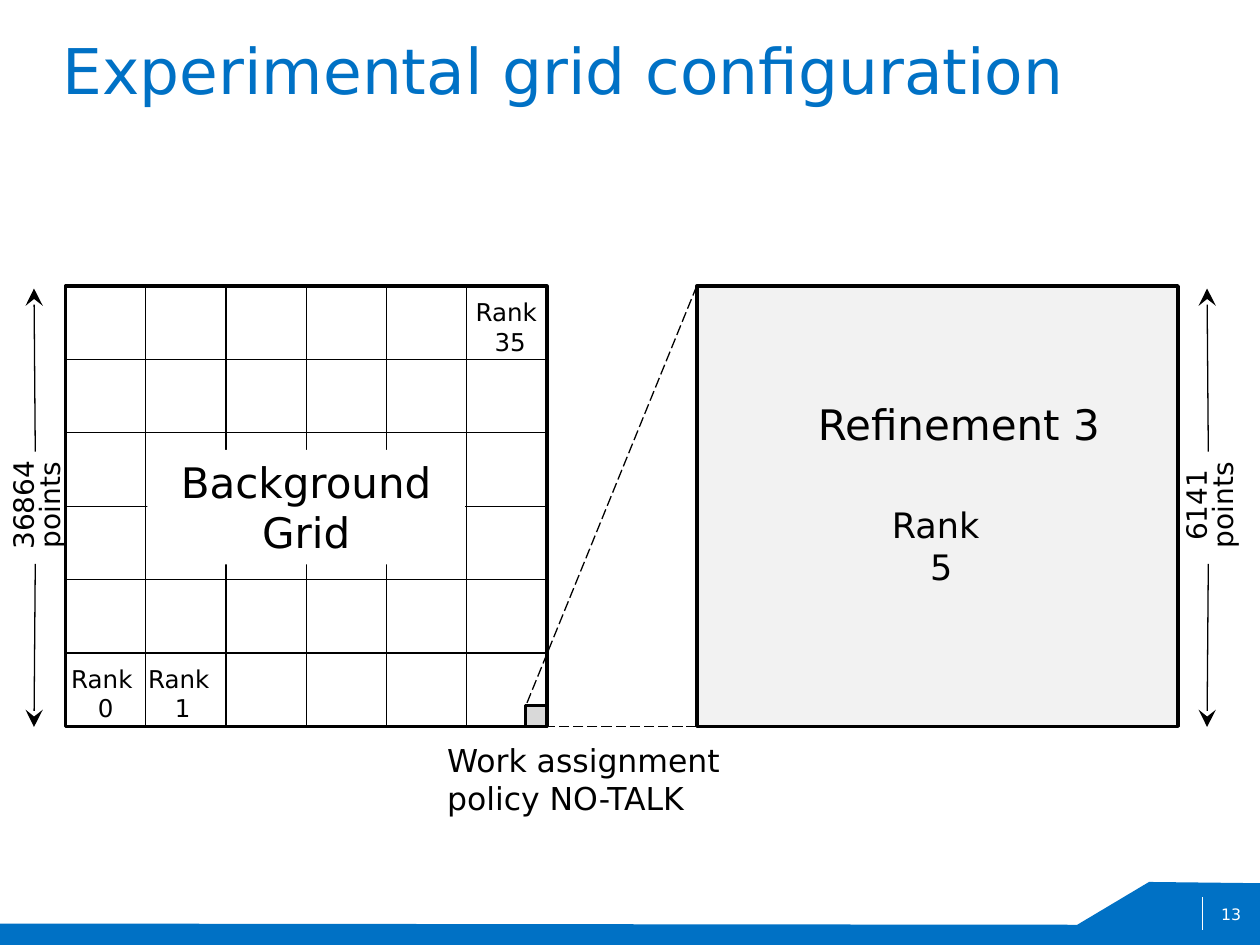
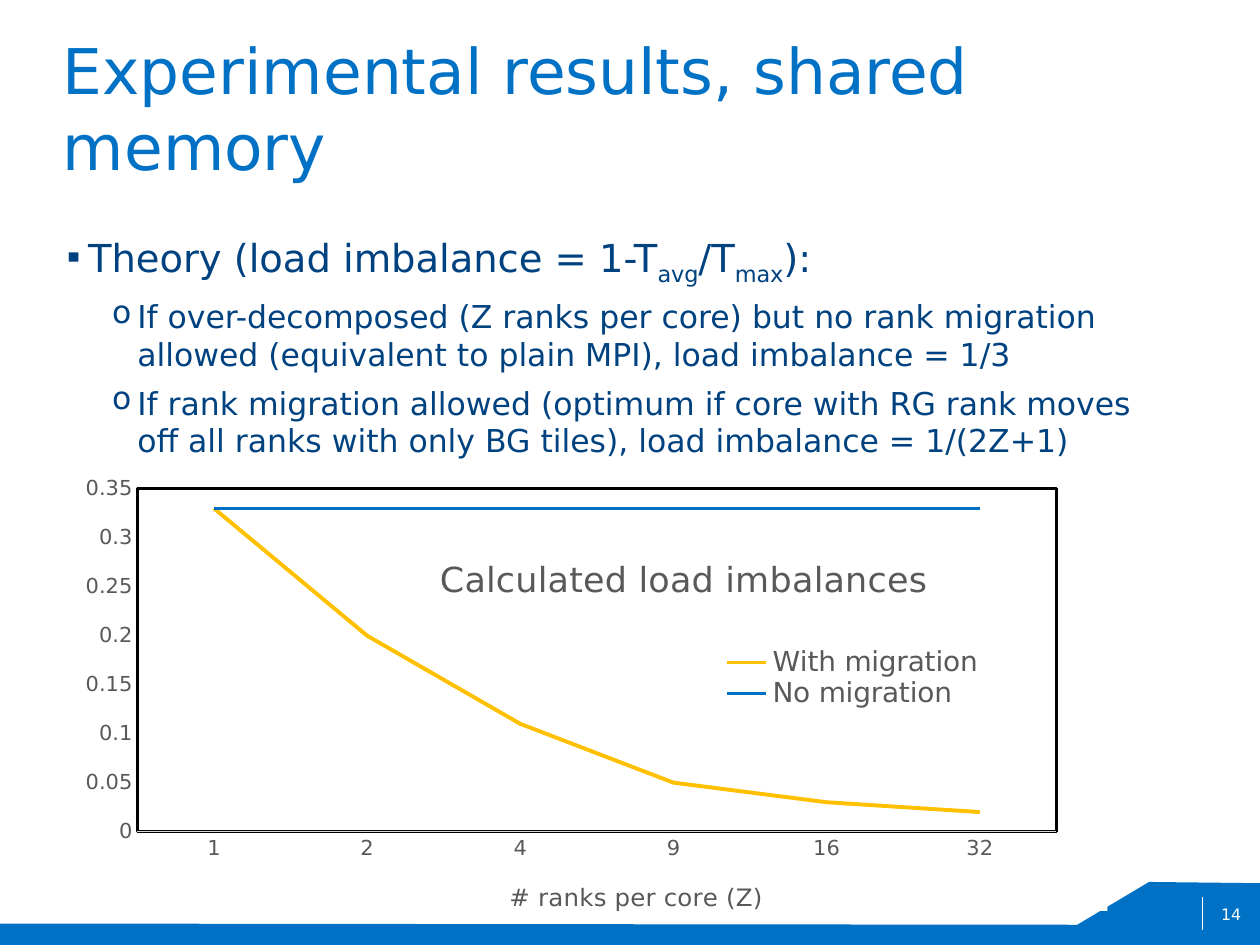
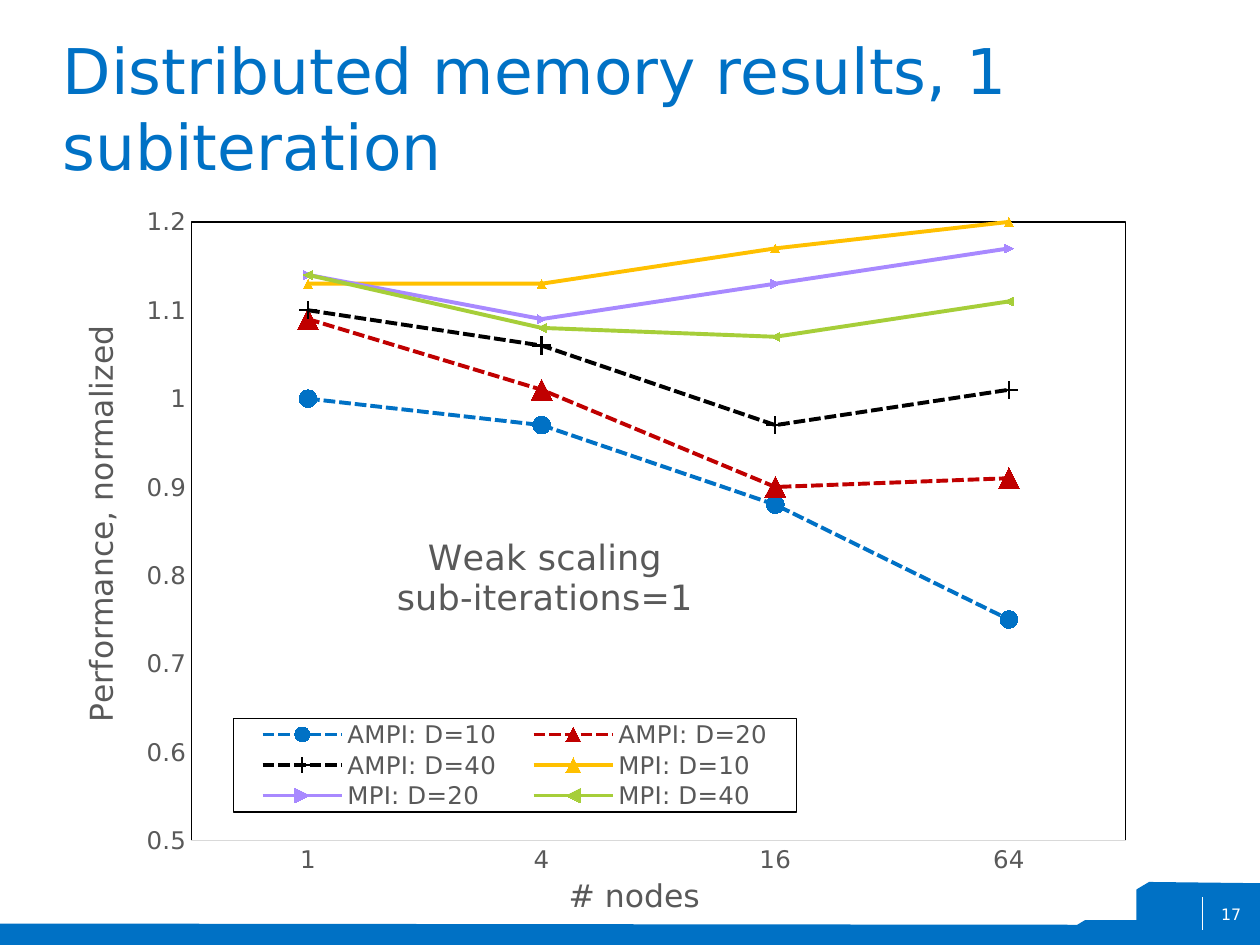
from pptx import Presentation
from pptx import util as u
from pptx.chart.data import CategoryChartData
from pptx.dml.color import RGBColor
from pptx.enum import chart as charts
from pptx.enum import dml, shapes, text
from pptx.oxml import parse_xml
from pptx.oxml.ns import nsdecls, qn

WIDTH, HEIGHT = u.Inches(10), u.Inches(7.5)
COLUMN, ROW = WIDTH / 100, HEIGHT / 75
FONT = "DejaVu Sans"
BLUE = RGBColor(0x00, 0x71, 0xC5)
NAVY = RGBColor(0x00, 0x42, 0x80)
BLACK = RGBColor(0x00, 0x00, 0x00)
WHITE = RGBColor(0xFF, 0xFF, 0xFF)
PALE = RGBColor(0xF2, 0xF2, 0xF2)
SILVER = RGBColor(0xD9, 0xD9, 0xD9)
GRAY = RGBColor(0x59, 0x59, 0x59)
GOLD = RGBColor(0xFF, 0xC0, 0x00)
RED = RGBColor(0xC0, 0x00, 0x00)
VIOLET = RGBColor(0xA8, 0x89, 0xFF)
LIME = RGBColor(0xA6, 0xCE, 0x39)
LEFT, CENTER, RIGHT = text.PP_ALIGN.LEFT, text.PP_ALIGN.CENTER, text.PP_ALIGN.RIGHT
MARK = charts.XL_MARKER_STYLE


def point(column, row):
    """Turn grid columns and rows into slide units."""
    return round(column * COLUMN), round(row * ROW)


def area(column, row, columns, rows):
    """Turn a grid rectangle into position and size."""
    return point(column, row) + point(columns, rows)


def style(font, size, color):
    """Set the face, size and colour of a font."""
    font.name, font.size = FONT, u.Pt(size)
    font.color.rgb = color


def add_text(page, place, words, size, color=BLACK, align=LEFT, wrap=True,
             inset=True, spacing=None, turn=0):
    """Add a text box in one style."""
    box = page.shapes.add_textbox(*area(*place))
    box.rotation = turn
    frame = box.text_frame
    frame.word_wrap = wrap
    if not inset:
        frame.margin_left = frame.margin_right = 0
        frame.margin_top = frame.margin_bottom = 0
    frame.text = words
    for para in frame.paragraphs:
        para.alignment = align
        para.line_spacing = spacing
        for span in para.runs:
            style(span.font, size, color)
    return box


def add_rect(page, place, fill=None, line=None):
    """Add a flat rectangle."""
    rect = page.shapes.add_shape(shapes.MSO_SHAPE.RECTANGLE, *area(*place))
    rect.shadow.inherit = False
    if fill is None:
        rect.fill.background()
    else:
        rect.fill.solid()
        rect.fill.fore_color.rgb = fill
    if line is None:
        rect.line.fill.background()
    else:
        rect.line.color.rgb, rect.line.width = line, u.Pt(2)


def add_line(page, start, end, color=BLACK, width=0.75, dash=None, arrow=False):
    """Add a straight line, dashed or with an arrowhead on request."""
    line = page.shapes.add_connector(
        shapes.MSO_CONNECTOR.STRAIGHT, *point(*start), *point(*end))
    line.line.color.rgb, line.line.width = color, u.Pt(width)
    if dash:
        line.line.dash_style = dash
    if arrow:
        line.line._get_or_add_ln().append(parse_xml(
            f'<a:tailEnd {nsdecls("a")} type="stealth" w="lg" len="lg"/>'))
    line._element.spPr.append(parse_xml(f'<a:effectLst {nsdecls("a")}/>'))


def add_page(deck, title, number):
    """Add a slide with its title, footer band and number."""
    page = deck.slides.add_slide(deck.slide_layouts[6])
    outline = [(100, 70.1), (91.2, 70), (85.5, 73.4), (0, 73.3), (0, 75), (100, 75)]
    corners = [point(*corner) for corner in outline]
    builder = page.shapes.build_freeform(*corners[0], scale=1.0)
    builder.add_line_segments(corners[1:], close=True)
    band = builder.convert_to_shape()
    band.shadow.inherit = False
    band.fill.solid()
    band.fill.fore_color.rgb = BLUE
    band.line.fill.background()
    add_line(page, (95.4, 71.2), (95.4, 73.8), WHITE, 0.25)
    add_text(page, (5, 2.5, 90, 12.6), title, 36, BLUE, inset=False)
    label = add_text(page, (75.2, 70.6, 23.3, 4), str(number), 9, WHITE, RIGHT, inset=False)
    label.text_frame.vertical_anchor = text.MSO_ANCHOR.MIDDLE
    return page


def add_mesh(page, column, row, columns, rows, cells):
    """Add a framed square mesh with equal cells."""
    add_rect(page, (column, row, columns, rows), line=BLACK)
    for step in range(1, cells):
        x, y = column + columns * step / cells, row + rows * step / cells
        add_line(page, (column, y), (column + columns, y))
        add_line(page, (x, row), (x, row + rows))


def add_height(page, column, words):
    """Add a vertical dimension with its turned label."""
    middle, reach, gap, length = 40.3, 17.4, 4.45, 12
    for way in (-1, 1):
        add_line(page, (column, middle + way * gap),
                 (column - 0.1, middle + way * reach), arrow=True)
    add_text(page, (column + 0.35 - length / 2, middle - 2.8, length, 5.2), words, 16,
             align=CENTER, wrap=False, spacing=u.Pt(15), turn=270)


def add_bullets(page, place, items):
    """Add bullets given as level, mark, mark share, size and (words, lowered) spans."""
    frame = add_text(page, place, "", 22, inset=False).text_frame
    for index, (level, mark, share, size, spans) in enumerate(items):
        para = frame.add_paragraph() if index else frame.paragraphs[0]
        para.level = level
        props = para._p.get_or_add_pPr()
        props.set("marL", str(u.Inches(0.2 + 0.39 * level)))
        props.set("indent", str(u.Inches(-0.2)))
        props.append(parse_xml(f'<a:buSzPct {nsdecls("a")} val="{share * 1000}"/>'))
        props.append(parse_xml(f'<a:buChar {nsdecls("a")} char="{mark}"/>'))
        if index:
            para.space_before = u.Pt(6)
        for words, lowered in spans:
            span = para.add_run()
            span.text = words
            style(span.font, size, NAVY)
            if lowered:
                span._r.get_or_add_rPr().set("baseline", "-25000")


def frame_xml(fill=None, line=None, width=0.75):
    """Make the fill and outline of a chart part."""
    paint = '<a:solidFill><a:srgbClr val="{}"/></a:solidFill>'
    inside = paint.format(fill) if fill else "<a:noFill/>"
    edge = paint.format(line) if line else "<a:noFill/>"
    return parse_xml(f'<c:spPr {nsdecls("c", "a")}>{inside}'
                     f'<a:ln w="{u.Pt(width)}">{edge}</a:ln></c:spPr>')


def place_part(part, spot):
    """Place a chart part at shares of the chart's size."""
    old = part.find(qn("c:layout"))
    if old is not None:
        part.remove(old)
    is_plot = part.tag == qn("c:plotArea")
    target = '<c:layoutTarget val="inner"/>' if is_plot else ""
    sizes = "".join(f'<c:{key} val="{value}"/>' for key, value in zip("xywh", spot))
    part.insert(0 if is_plot else 1, parse_xml(
        f'<c:layout {nsdecls("c")}><c:manualLayout>{target}<c:xMode val="edge"/>'
        f'<c:yMode val="edge"/>{sizes}</c:manualLayout></c:layout>'))


def style_axis(axis, size, title=None, title_size=14):
    """Style an axis and its optional title."""
    axis.has_major_gridlines = False
    axis.major_tick_mark = axis.minor_tick_mark = charts.XL_TICK_MARK.NONE
    style(axis.tick_labels.font, size, GRAY)
    axis.has_title = bool(title)
    if title:
        set_title(axis.axis_title, title, title_size)


def set_title(title, words, size):
    """Write and style a chart or axis title."""
    title.text_frame.text = words
    for para in title.text_frame.paragraphs:
        for span in para.runs:
            style(span.font, size, GRAY)
            span.font.bold = False


def add_line_chart(page, place, kind, categories, rows, title, axis_titles,
                   title_size, tick_size, legend_size, scale, spots, border):
    """Add a line chart; spots place plot, legend and titles in turn."""
    data = CategoryChartData()
    data.categories = categories
    for name, values, *_ in rows:
        data.add_series(name, values)
    chart = page.shapes.add_chart(kind, *area(*place), data).chart
    style(chart.font, tick_size, BLACK)
    chart.has_title = True
    set_title(chart.chart_title, title, 20)
    chart.has_legend = True
    chart.legend.position = charts.XL_LEGEND_POSITION.BOTTOM
    chart.legend.include_in_layout = False
    style(chart.legend.font, legend_size, GRAY)
    for axis, words in zip((chart.category_axis, chart.value_axis), axis_titles):
        style_axis(axis, tick_size, words, title_size)
    chart.category_axis.format.line.color.rgb = SILVER
    chart.value_axis.format.line.fill.background()
    axis = chart.value_axis
    axis.minimum_scale, axis.maximum_scale, axis.major_unit = scale
    for series, (_, _, color, width, dash, mark, size) in zip(chart.plots[0].series, rows):
        series.smooth = False
        series.format.line.color.rgb, series.format.line.width = color, u.Pt(width)
        if dash:
            series.format.line.dash_style = dash
        if mark:
            series.marker.style = mark
        if size:
            series.marker.size = size
            series.marker.format.fill.solid()
            series.marker.format.fill.fore_color.rgb = color
            series.marker.format.line.color.rgb = color
    root = chart.element
    plot, legend = root.xpath(".//c:plotArea")[0], root.xpath(".//c:legend")[0]
    for part, spot in zip([plot, legend] + root.xpath(".//c:title"), spots):
        place_part(part, spot)
    if not root.xpath(".//c:valAx/c:crossBetween"):
        root.xpath(".//c:valAx/c:crosses")[0].addnext(
            parse_xml(f'<c:crossBetween {nsdecls("c")} val="between"/>'))
    plot.append(frame_xml(line=BLACK, width=border))
    root.find(qn("c:chart")).addnext(frame_xml(fill=WHITE))
    return legend


def grid_page(deck):
    """Show the background grid and its refinement."""
    page = add_page(deck, "Experimental grid configuration", 13)
    left, top, wide, high = 5.2, 22.7, 38.2, 34.95
    zoom = 55.3
    add_mesh(page, left, top, wide, high, 6)
    for rank, column, row in ((0, 4.6, 52.2), (1, 10.7, 52.2), (35, 36.7, 23.1)):
        add_text(page, (column, row, 7.6, 5.7), f"Rank \v{rank}", 14, align=CENTER, wrap=False)
    add_rect(page, (11.7, 35.7, 25.2, 9.1), WHITE)
    add_text(page, (11.7, 35.7, 25.2, 9.1), "Background\nGrid", 24, align=CENTER)
    add_rect(page, (zoom, top, wide, high), PALE, BLACK)
    add_text(page, (69.7, 39.5, 10, 7.7), "Rank \v5", 20, align=CENTER, wrap=False)
    add_text(page, (63.5, 31.1, 25.2, 5), "Refinement 3", 24, align=CENTER)
    add_height(page, 2.8, "36864\vpoints")
    add_height(page, 95.9, "6141\vpoints")
    dash = dml.MSO_LINE.LONG_DASH
    add_line(page, (zoom, top), (41.7, 56.1), dash=dash)
    add_line(page, (zoom, top + high), (left + wide, top + high), dash=dash)
    add_text(page, (34.5, 58.3, 29.6, 6.5), "Work assignment policy NO-TALK", 18)
    add_rect(page, (41.7, 56, 1.7, 1.65), SILVER, BLACK)


def shared_page(deck):
    """Show the theory of load imbalance and its chart."""
    page = add_page(deck, "Experimental results, shared memory", 14)
    add_bullets(page, (5, 18.6, 86, 18.5), [
        (0, "▪", 75, 22, [("Theory (load imbalance = 1-T", False), ("avg", True),
                          ("/T", False), ("max", True), ("):", False)]),
        (1, "o", 100, 18, [("If over-decomposed (Z ranks per core) but no rank migration allowed "
                            "(equivalent to plain MPI), load imbalance = 1/3", False)]),
        (1, "o", 100, 18, [("If rank migration allowed (optimum if core with RG rank moves off "
                            "all ranks with only BG tiles), load imbalance = 1/(2Z+1)", False)])])
    rows = [("With migration", (0.33, 0.2, 0.11, 0.05, 0.03, 0.02), GOLD, 2.25, None, None, None),
            ("No migration", (0.33,) * 6, BLUE, 1.5, None, None, None)]
    add_line_chart(
        page, (6.8, 37.4, 81.1, 35.5), charts.XL_CHART_TYPE.LINE,
        ("1", "2", "4", "9", "16", "32"), rows, "Calculated load imbalances",
        ("# ranks per core (Z)", None), 14, 12, 16, (0, 0.35, 0.05),
        [(0.05, 0.04, 0.9, 0.78), (0.62, 0.4, 0.26, 0.14), (0.34, 0.18), (0.41, 0.92)], 1.75)


def distributed_page(deck):
    """Show weak scaling over the nodes."""
    page = add_page(deck, "Distributed memory results, 1 subiteration", 17)
    dash = dml.MSO_LINE.SQUARE_DOT
    rows = [("AMPI: D=10", (1, 0.97, 0.88, 0.75), BLUE, 2.25, dash, MARK.CIRCLE, 10),
            ("AMPI: D=20", (1.09, 1.01, 0.9, 0.91), RED, 2.25, dash, MARK.TRIANGLE, 12),
            ("AMPI: D=40", (1.1, 1.06, 0.97, 1.01), BLACK, 2.25, dash, MARK.PLUS, 10),
            ("MPI: D=10", (1.13, 1.13, 1.17, 1.2), GOLD, 2.25, None, MARK.TRIANGLE, 5),
            ("MPI: D=20", (1.14, 1.09, 1.13, 1.17), VIOLET, 2.25, None, None, 5),
            ("MPI: D=40", (1.14, 1.08, 1.07, 1.11), LIME, 2.25, None, None, 5)]
    legend = add_line_chart(
        page, (5.9, 15.9, 84.3, 57.5), charts.XL_CHART_TYPE.LINE_MARKERS,
        ("1", "4", "16", "64"), rows, "Weak scaling\nsub-iterations=1",
        ("# nodes", "Performance, normalized"), 18, 14, 14, (0.5, 1.2, 0.1),
        [(0.11, 0.03, 0.88, 0.86), (0.15, 0.72, 0.53, 0.13), (0.3, 0.46),
         (0.46, 0.93), (0, 0.17)], 0.75)
    legend.find(qn("c:txPr")).addprevious(frame_xml(line=BLACK))


def main():
    """Build and save the deck."""
    deck = Presentation()
    deck.slide_width, deck.slide_height = WIDTH, HEIGHT
    grid_page(deck)
    shared_page(deck)
    distributed_page(deck)
    deck.save("out.pptx")


if __name__ == "__main__":
    main()
